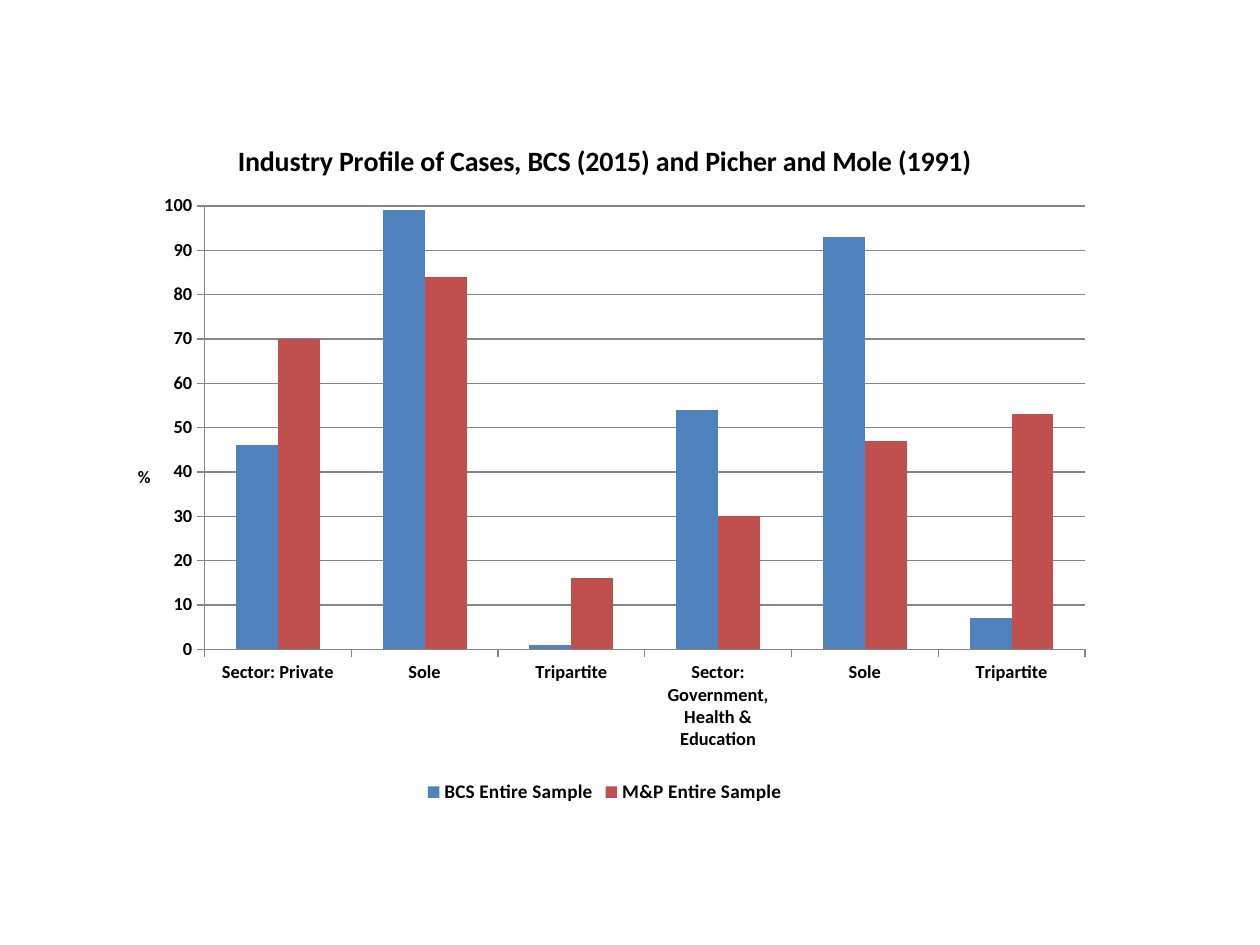
from pptx import Presentation
from pptx import util as u
from pptx.chart import data
from pptx.dml.color import RGBColor
from pptx.enum import chart as ec
from pptx.oxml import parse_xml
from pptx.oxml.ns import nsdecls

BLACK = RGBColor(0, 0, 0)
GRAY = RGBColor(0x86, 0x86, 0x86)
BLUE = RGBColor(0x4F, 0x81, 0xBD)
RED = RGBColor(0xC0, 0x50, 0x4D)


def place(owner, index, inner, **sizes):
    for old in owner.xpath("c:layout"):
        owner.remove(old)
    target = '<c:layoutTarget val="inner"/>' if inner else ""
    modes = '<c:xMode val="edge"/><c:yMode val="edge"/>'
    parts = "".join(f'<c:{key} val="{val}"/>' for key, val in sizes.items())
    owner.insert(index, parse_xml(
        f'<c:layout {nsdecls("c")}><c:manualLayout>{target}{modes}{parts}'
        "</c:manualLayout></c:layout>"))


def style(font, size):
    look = {"name": "Calibri", "size": u.Pt(size), "bold": True}
    for key, val in look.items():
        setattr(font, key, val)
    font.color.rgb = BLACK


deck = Presentation()
deck.slide_width = u.Inches(10)
deck.slide_height = u.Inches(7.5)
slide = deck.slides.add_slide(deck.slide_layouts[6])

cases = data.CategoryChartData()
cases.categories = ["Sector: Private", "Sole", "Tripartite",
                    "Sector: Government, Health & Education", "Sole", "Tripartite"]
cases.add_series("BCS Entire Sample", [46, 99, 1, 54, 93, 7])
cases.add_series("M&P Entire Sample", [70, 84, 16, 30, 47, 53])
chart = slide.shapes.add_chart(
    ec.XL_CHART_TYPE.COLUMN_CLUSTERED, u.Inches(0.83), u.Inches(0.92),
    u.Inches(7.94), u.Inches(5.5), cases).chart
style(chart.font, 10)

chart.has_title = True
title = chart.chart_title
title.include_in_layout = False
title.text_frame.text = "Industry Profile of Cases, BCS (2015) and Picher and Mole (1991)"
style(title.text_frame.paragraphs[0].runs[0].font, 16)

chart.has_legend = True
legend = chart.legend
legend.position = ec.XL_LEGEND_POSITION.BOTTOM
legend.include_in_layout = False
style(legend.font, 11)

plot = chart.plots[0]
for key, val in {"gap_width": 150, "overlap": 0, "vary_by_categories": False}.items():
    setattr(plot, key, val)
for bar, color in zip(plot.series, (BLUE, RED)):
    bar.format.fill.solid()
    bar.format.fill.fore_color.rgb = color

cat, val = chart.category_axis, chart.value_axis
for axis in (cat, val):
    axis.major_tick_mark = ec.XL_TICK_MARK.OUTSIDE
    axis.minor_tick_mark = ec.XL_TICK_MARK.NONE
    axis.format.line.color.rgb = GRAY
    style(axis.tick_labels.font, 10.5)
cat.has_major_gridlines = False
for key, num in {"minimum_scale": 0, "maximum_scale": 100, "major_unit": 10,
                 "has_major_gridlines": True, "has_title": True}.items():
    setattr(val, key, num)
val.major_gridlines.format.line.color.rgb = GRAY

label = val.axis_title
label.text_frame.text = "%"
style(label.text_frame.paragraphs[0].runs[0].font, 10)
body = label.element.xpath(".//a:bodyPr")[0]
for key, turn in {"rot": "0", "vert": "horz"}.items():
    body.set(key, turn)
place(label.element, 1, False, x=0.03, y=0.5)
place(chart.element.xpath(".//c:plotArea")[0], 0, True, x=0.1, y=0.13, w=0.88, h=0.64)

deck.save("out.pptx")
